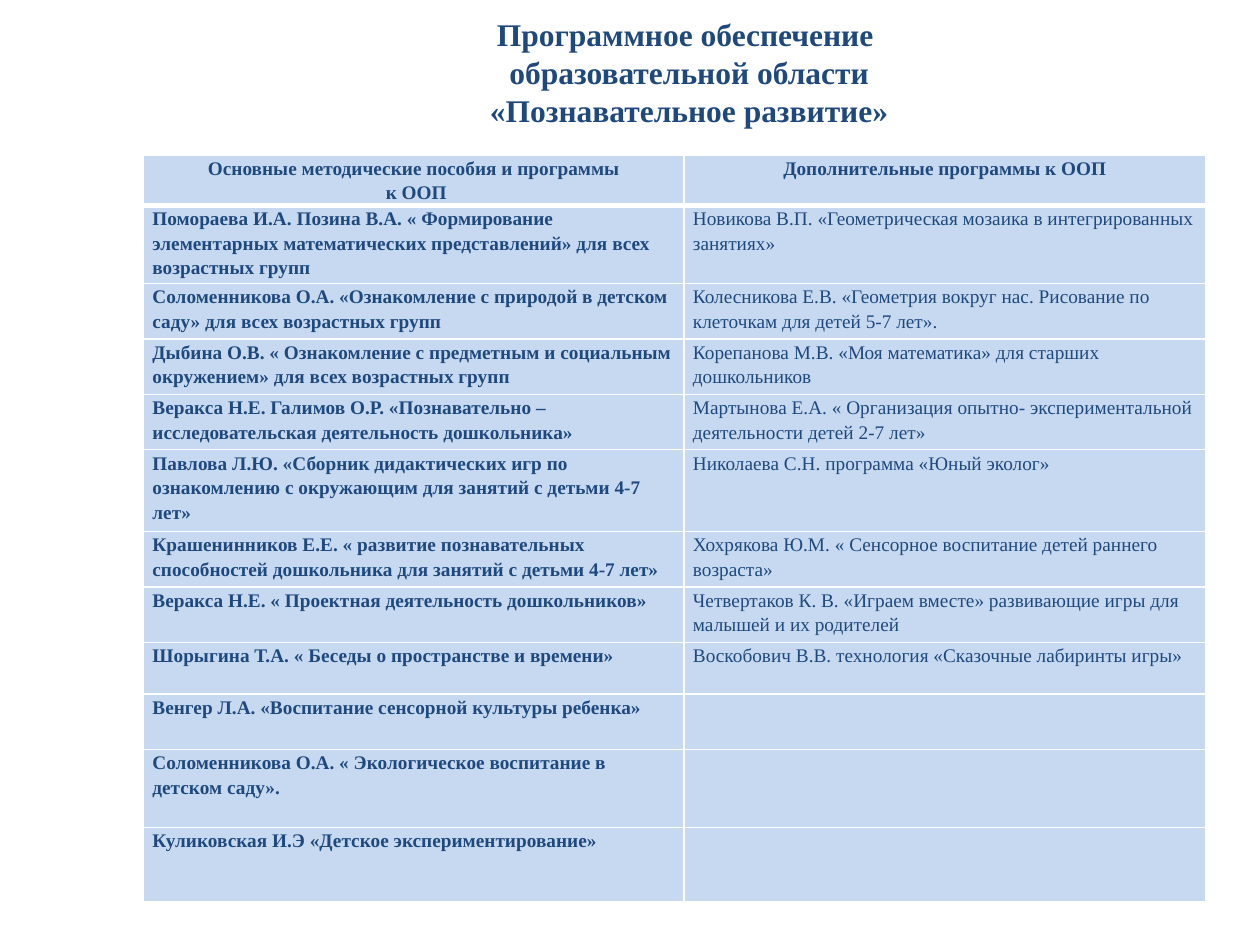
import pptx
import pptx.util
import pptx.dml.color
import pptx.enum.text
import pptx.oxml
import pptx.oxml.ns
from pptx.util import Inches

FONT = "Times New Roman"
NAVY, PALE, WHITE = "1F497D", "C6D9F1", "FFFFFF"

# Content
TITLE = ["Программное обеспечение ", "образовательной области", "«Познавательное развитие»"]
HEADERS = [["Основные методические пособия и программы", " к ООП"],
           ["Дополнительные программы к ООП"]]
# Row height, main handbook, additional programme
ROWS = [
    (0.62, "Помораева И.А. Позина В.А. « Формирование элементарных математических представлений» для всех возрастных групп",
     "Новикова В.П. «Геометрическая мозаика в интегрированных занятиях»"),
    (0.44, "Соломенникова О.А. «Ознакомление с природой в детском саду» для всех возрастных групп",
     "Колесникова Е.В. «Геометрия вокруг нас. Рисование по клеточкам для детей 5-7 лет»."),
    (0.44, "Дыбина О.В. « Ознакомление с предметным и социальным окружением» для всех возрастных групп",
     "Корепанова М.В. «Моя математика» для старших дошкольников"),
    (0.44, "Веракса Н.Е. Галимов О.Р. «Познавательно – исследовательская деятельность дошкольника»",
     "Мартынова Е.А. « Организация опытно- экспериментальной деятельности детей 2-7 лет»"),
    (0.65, "Павлова Л.Ю. «Сборник дидактических игр по ознакомлению с окружающим для занятий с детьми 4-7 лет»",
     "Николаева С.Н. программа «Юный эколог»"),
    (0.44, "Крашенинников Е.Е. « развитие познавательных способностей дошкольника для занятий с детьми 4-7 лет»",
     "Хохрякова Ю.М. « Сенсорное воспитание детей раннего возраста»"),
    (0.44, "Веракса Н.Е. « Проектная деятельность дошкольников»",
     "Четвертаков К. В. «Играем вместе» развивающие игры для малышей и их родителей"),
    (0.41, "Шорыгина Т.А. « Беседы о пространстве и времени»",
     "Воскобович В.В. технология «Сказочные лабиринты игры»"),
    (0.44, "Венгер Л.А. «Воспитание сенсорной культуры ребенка»", ""),
    (0.62, "Соломенникова О.А. « Экологическое воспитание в детском саду».", ""),
    (0.59, "Куликовская И.Э «Детское экспериментирование»", ""),
]
COL_WIDTHS = [4.29, 4.14]
HEADER_HEIGHT = 0.4
CENTER = pptx.enum.text.PP_ALIGN.CENTER
LEFT = pptx.enum.text.PP_ALIGN.LEFT


def rgb(value):
    return pptx.dml.color.RGBColor.from_string(value)


def write(tf, lines, size, bold, align, spacing=1.0):
    for i, line in enumerate(lines):
        p = tf.paragraphs[0] if i == 0 else tf.add_paragraph()
        p.alignment, p.line_spacing = align, spacing
        r = p.add_run()
        r.text = line
        r.font.name, r.font.size, r.font.bold = FONT, pptx.util.Pt(size), bold
        r.font.color.rgb = rgb(NAVY)


def set_borders(cell, widths):
    tc_pr = cell._tc.get_or_add_tcPr()
    for side, width in zip("LRTB", widths):
        tc_pr.append(pptx.oxml.parse_xml(
            f'<a:ln{side} {pptx.oxml.ns.nsdecls("a")} w="{pptx.util.Pt(width)}">'
            f'<a:solidFill><a:srgbClr val="{WHITE}"/></a:solidFill></a:ln{side}>'))


prs = pptx.Presentation()
prs.slide_width, prs.slide_height = Inches(10), Inches(7.5)
s = prs.slides.add_slide(prs.slide_layouts[5])

# Title
title = s.shapes.title
title.left, title.top, title.width, title.height = map(Inches, (2.32, 0.04, 6.3, 1.31))
tf = title.text_frame
tf.word_wrap = True
tf.auto_size = pptx.enum.text.MSO_AUTO_SIZE.NONE
tf.vertical_anchor = pptx.enum.text.MSO_ANCHOR.TOP
tf.margin_top = Inches(0.08)
write(tf, TITLE, 18, True, CENTER)

# Table
heights = [HEADER_HEIGHT] + [row[0] for row in ROWS]
table = s.shapes.add_table(len(heights), len(COL_WIDTHS), Inches(1.14), Inches(1.23),
                           Inches(sum(COL_WIDTHS)), Inches(sum(heights))).table
for column, width in zip(table.columns, COL_WIDTHS):
    column.width = Inches(width)
for row, height in zip(table.rows, heights):
    row.height = Inches(height)

cells = [HEADERS] + [[[text] if text else [] for text in row[1:]] for row in ROWS]
for i, row in enumerate(cells):
    for j, lines in enumerate(row):
        cell = table.cell(i, j)
        cell.margin_left = cell.margin_right = Inches(0.07)
        cell.margin_top = cell.margin_bottom = 0
        # The rule under the header is thicker
        set_borders(cell, (1, 1, 3 if i == 1 else 1, 3 if i == 0 else 1))
        cell.fill.solid()
        cell.fill.fore_color.rgb = rgb(PALE)
        write(cell.text_frame, lines, 11, i == 0 or j == 0, CENTER if i == 0 else LEFT, 1.15)

prs.save("out.pptx")
